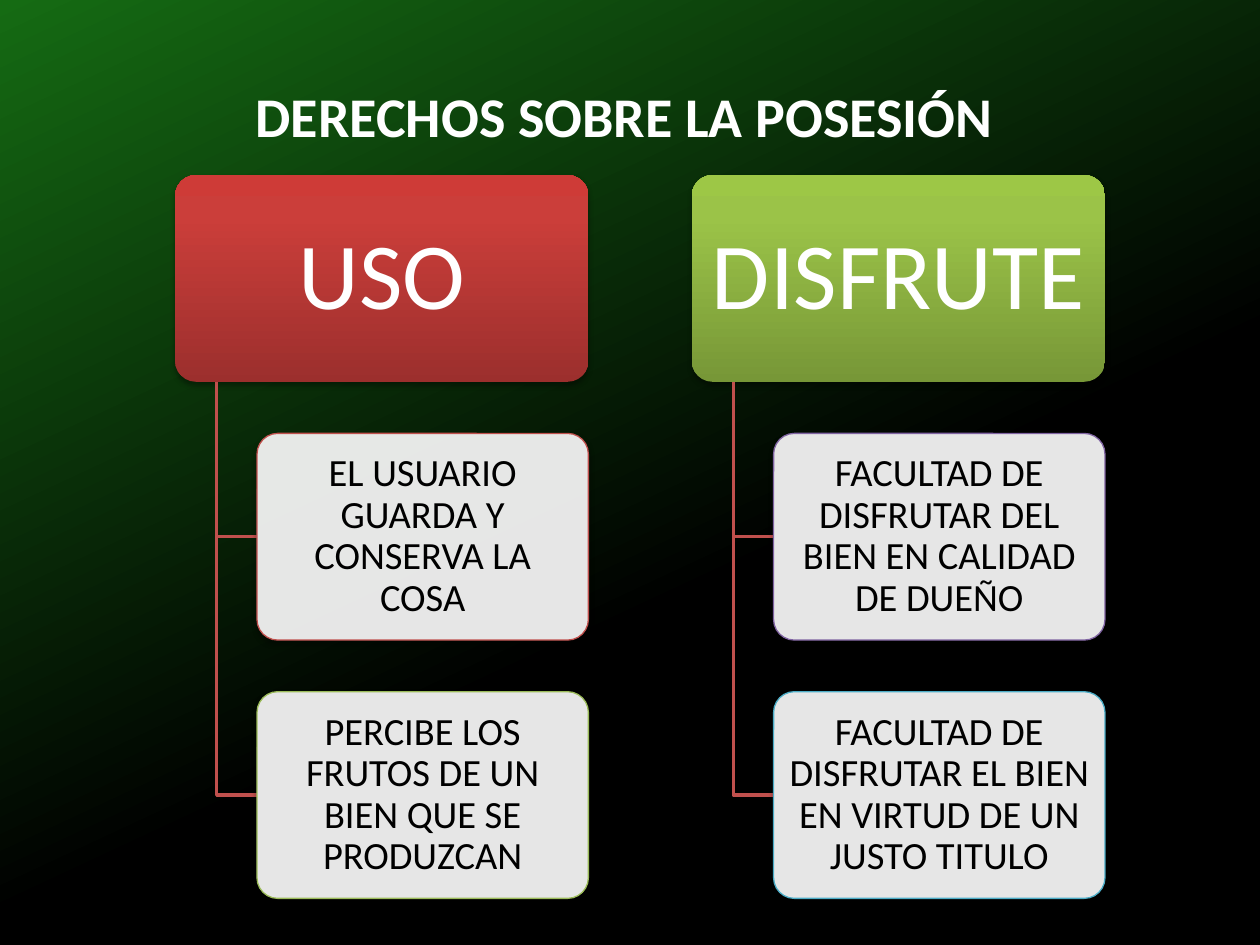
from copy import deepcopy

from lxml import etree
from pptx import Presentation
from pptx.dml.color import RGBColor
from pptx.enum.shapes import MSO_SHAPE
from pptx.enum.text import MSO_ANCHOR, PP_ALIGN
from pptx.oxml.ns import qn
from pptx.util import Inches, Pt

ROUNDED = MSO_SHAPE.ROUNDED_RECTANGLE
MIDDLE = MSO_ANCHOR.MIDDLE
CENTER = PP_ALIGN.CENTER

BLACK = RGBColor(0x00, 0x00, 0x00)
WHITE = RGBColor(0xFF, 0xFF, 0xFF)
GREEN = RGBColor(0x15, 0x6B, 0x13)
RED = RGBColor(0xC0, 0x50, 0x4D)
LIME = RGBColor(0x9B, 0xBB, 0x59)
PURPLE = RGBColor(0x80, 0x64, 0xA2)
AQUA = RGBColor(0x4B, 0xAC, 0xC6)
RED_STOPS = [RGBColor(0x9C, 0x2F, 0x2D), RGBColor(0xCB, 0x3E, 0x3A), RGBColor(0xCE, 0x3B, 0x37)]
LIME_STOPS = [RGBColor(0x77, 0x97, 0x37), RGBColor(0x9B, 0xC3, 0x48), RGBColor(0x9D, 0xC7, 0x46)]

FONT = "Calibri"
BOX_H, HEAD_W, CHILD_W = 1.64, 3.28, 2.63
TOP, ROW_STEP = 1.39, 2.05
STEM_DX, CHILD_DX = 0.33, 0.65

COLUMNS = [
    (1.39, "USO", RED_STOPS, [
        ("EL USUARIO GUARDA Y CONSERVA LA COSA", RED),
        ("PERCIBE LOS FRUTOS DE UN BIEN QUE SE PRODUZCAN", LIME)]),
    (5.49, "DISFRUTE", LIME_STOPS, [
        ("FACULTAD DE DISFRUTAR DEL BIEN EN CALIDAD DE DUEÑO", PURPLE),
        ("FACULTAD DE DISFRUTAR EL BIEN EN VIRTUD DE UN JUSTO TITULO", AQUA)]),
]


def set_gradient(fill, stops, angle):
    fill.gradient()
    fill.gradient_angle = angle
    for stop, (position, color) in zip(fill.gradient_stops, stops):
        stop.position = position
        stop.color.rgb = color


def add_box(x, y, w, text, size, color, inset_x, inset_y):
    s = slide.shapes.add_shape(ROUNDED, Inches(x), Inches(y), Inches(w), Inches(BOX_H))
    s.adjustments[0] = 0.1
    # Soft shadow straight below
    s.shadow.inherit = False
    effects = s._element.spPr.find(qn("a:effectLst"))
    shadow = etree.SubElement(effects, qn("a:outerShdw"), blurRad=str(Pt(3.1)),
                              dist=str(Pt(1.8)), dir="5400000", rotWithShape="0")
    shade = etree.SubElement(shadow, qn("a:srgbClr"), val="000000")
    etree.SubElement(shade, qn("a:alpha"), val="35000")
    # Centred text
    tf = s.text_frame
    tf.text = text
    tf.word_wrap = True
    tf.vertical_anchor = MIDDLE
    tf.margin_left = tf.margin_right = Inches(inset_x)
    tf.margin_top = tf.margin_bottom = Inches(inset_y)
    p = tf.paragraphs[0]
    p.alignment = CENTER
    p.line_spacing = 0.9
    r = p.runs[0]
    r.font.name, r.font.size, r.font.color.rgb = FONT, Pt(size), color
    return s


prs = Presentation()
prs.slide_width, prs.slide_height = Inches(10), Inches(7.5)
slide = prs.slides.add_slide(prs.slide_layouts[6])

# Background, green in the top left corner
set_gradient(slide.background.fill, [(0.4, BLACK), (1, GREEN)], 115)

for left, heading, (dark, mid, light), children in COLUMNS:
    # Heading box, dark at the bottom
    s = add_box(left, TOP, HEAD_W, heading, 54, WHITE, 0.11, 0.07)
    s.line.fill.background()
    set_gradient(s.fill, [(0, dark), (0.8, mid)], 90)
    stop_list = s._element.spPr.find(".//" + qn("a:gsLst"))
    stop_list.append(deepcopy(stop_list[-1]))
    last_stop = s.fill.gradient_stops[2]
    last_stop.position = 1
    last_stop.color.rgb = light

    stem_x, child_x = left + STEM_DX, left + CHILD_DX
    for row, (text, outline) in enumerate(children, start=1):
        y = TOP + row * ROW_STEP
        # Elbow from the heading to the child
        elbow_y = y + BOX_H / 2
        builder = slide.shapes.build_freeform(Inches(stem_x), Inches(TOP + BOX_H))
        builder.add_line_segments([(Inches(stem_x), Inches(elbow_y)),
                                   (Inches(child_x), Inches(elbow_y))], close=False)
        s = builder.convert_to_shape()
        s.shadow.inherit = False
        s.fill.background()
        s.line.color.rgb = RED
        s.line.width = Pt(2)

        # Child box, slightly transparent white
        s = add_box(child_x, y, CHILD_W, text, 22, BLACK, 0.05, 0.03)
        s.fill.solid()
        s.fill.fore_color.rgb = WHITE
        white = s._element.spPr.find(qn("a:solidFill"))[0]
        etree.SubElement(white, qn("a:alpha"), val="90000")
        s.line.color.rgb = outline
        s.line.width = Pt(0.75)

# Title
tf = slide.shapes.add_textbox(Inches(1.93), Inches(0.6), Inches(6.11), Inches(0.64)).text_frame
tf.word_wrap = False
tf.text = "DERECHOS SOBRE LA POSESIÓN"
r = tf.paragraphs[0].runs[0]
r.font.name, r.font.size, r.font.bold = FONT, Pt(32), True
r.font.color.rgb = WHITE

prs.save("out.pptx")
